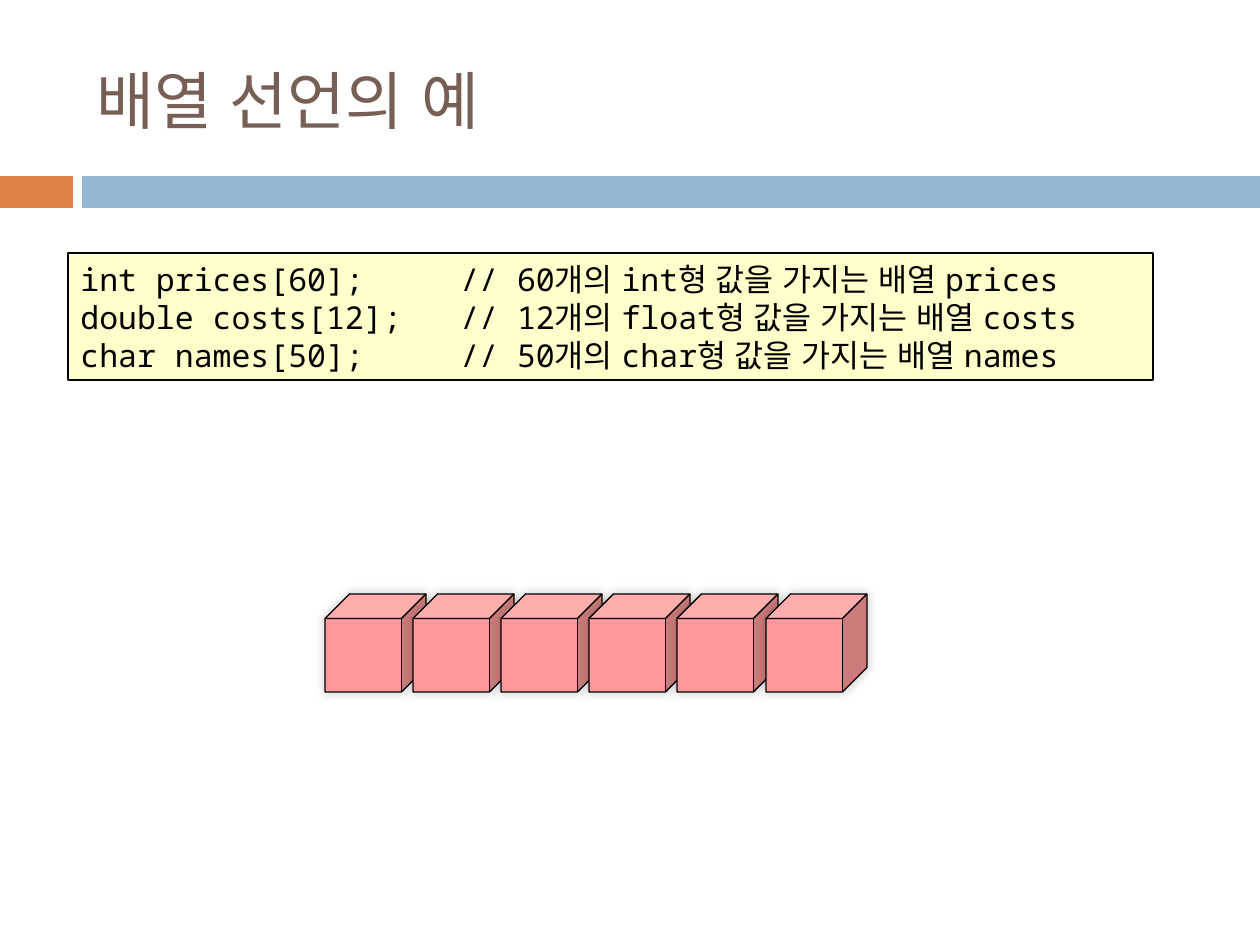
from dataclasses import dataclass

from lxml import etree
from pptx import Presentation
from pptx.dml.color import RGBColor
from pptx.enum.shapes import MSO_SHAPE
from pptx.enum.text import MSO_ANCHOR, PP_ALIGN
from pptx.oxml.ns import qn
from pptx.util import Emu, Pt

SCALE = 914400 / 126
RECT, CUBE = MSO_SHAPE.RECTANGLE, MSO_SHAPE.CUBE
MIDDLE, LEFT = MSO_ANCHOR.MIDDLE, PP_ALIGN.LEFT

ORANGE = RGBColor(0xDD, 0x80, 0x47)
BLUE = RGBColor(0x94, 0xB6, 0xD2)
BROWN = RGBColor(0x77, 0x5F, 0x55)
PINK = RGBColor(0xFF, 0x99, 0x99)
CREAM = RGBColor(0xFF, 0xFF, 0xCC)
BLACK = RGBColor(0, 0, 0)

SANS, MONO, ASIAN = "Noto Sans CJK KR", "Noto Sans Mono", "Arial"
CUBES, SPAN = 6, 441
TAB = 380
CODE = (
    "int prices[60];\t// 60개의 int형 값을 가지는 배열 prices",
    "double costs[12];\t// 12개의 float형 값을 가지는 배열 costs",
    "char names[50];\t// 50개의 char형 값을 가지는 배열 names",
)


@dataclass(frozen=True)
class Box:
    left: int
    top: int
    width: int
    height: int

    def emu(self) -> list[Emu]:
        sides = (self.left, self.top, self.width, self.height)
        return [px(side) for side in sides]


@dataclass(frozen=True)
class Style:
    font: str
    size: int
    color: RGBColor


def px(count: int) -> Emu:
    return Emu(round(count * SCALE))


def draw(slide, kind, box: Box, fill: RGBColor, edged: bool = False):
    shape = slide.shapes.add_shape(kind, *box.emu())
    shape.fill.solid()
    shape.fill.fore_color.rgb = fill
    if edged:
        shape.line.color.rgb = BLACK
        shape.line.width = Pt(0.75)
    else:
        shape.line.fill.background()
    shape.shadow.inherit = False
    return shape


def glow(shape) -> None:
    """Add a soft, faint shadow around the shape."""
    effects = shape._element.spPr.find(qn("a:effectLst"))
    outer = etree.SubElement(effects, qn("a:outerShdw"), blurRad=str(Pt(6)),
                             dist="0", dir="18900000")
    color = etree.SubElement(outer, qn("a:srgbClr"), val=str(BLACK))
    etree.SubElement(color, qn("a:alpha"), val="20000")


def write(para, text: str, style: Style) -> None:
    para.alignment = LEFT
    run = para.add_run()
    run.text = text
    run.font.name = style.font
    run.font.size = Pt(style.size)
    run.font.color.rgb = style.color
    asian = etree.SubElement(run.font._element, qn("a:ea"))
    asian.set("typeface", ASIAN)


def set_tab(para, stop: int) -> None:
    tabs = etree.SubElement(para._p.get_or_add_pPr(), qn("a:tabLst"))
    etree.SubElement(tabs, qn("a:tab"), pos=str(px(stop)), algn="l")


def add_title(slide) -> None:
    frame = slide.shapes.add_textbox(*Box(84, 31, 1124, 136).emu()).text_frame
    frame.word_wrap = True
    frame.vertical_anchor = MIDDLE
    write(frame.paragraphs[0], "배열 선언의 예", Style(SANS, 36, BROWN))


def add_code(slide) -> None:
    panel = draw(slide, RECT, Box(68, 253, 1085, 127), CREAM, edged=True)
    frame = panel.text_frame
    frame.word_wrap = True
    frame.vertical_anchor = MIDDLE
    style = Style(MONO, 18, BLACK)
    for row, line in enumerate(CODE):
        para = frame.add_paragraph() if row else frame.paragraphs[0]
        para.line_spacing = Pt(21.7)
        set_tab(para, TAB)
        write(para, line, style)


def main() -> None:
    deck = Presentation()
    deck.slide_width, deck.slide_height = px(1260), px(945)
    slide = deck.slides.add_slide(deck.slide_layouts[6])
    draw(slide, RECT, Box(0, 176, 73, 32), ORANGE)
    draw(slide, RECT, Box(82, 176, 1178, 32), BLUE)
    add_title(slide)
    for step in range(CUBES):
        left = 325 + step * SPAN // (CUBES - 1)
        glow(draw(slide, CUBE, Box(left, 594, 101, 98), PINK, edged=True))
    add_code(slide)
    deck.save("out.pptx")


if __name__ == "__main__":
    main()
